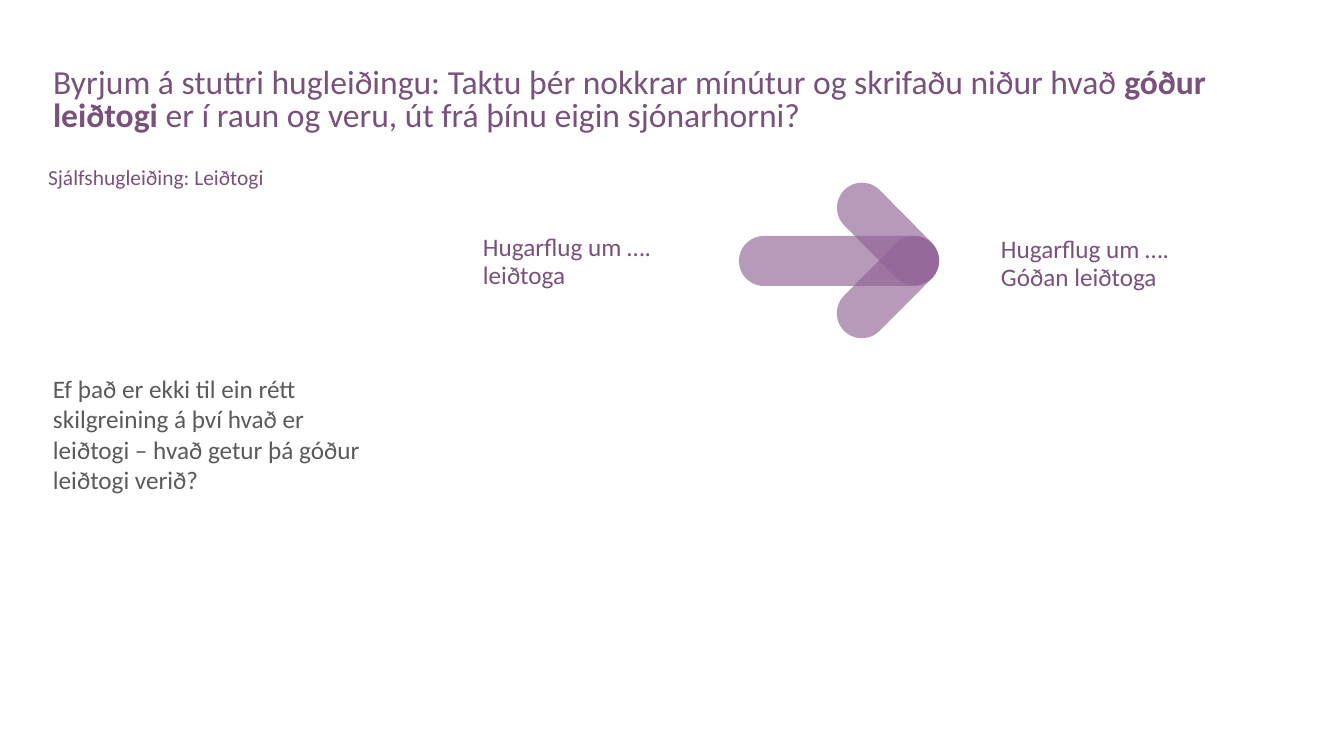
from pptx import Presentation
from pptx.dml.color import RGBColor
from pptx.enum.shapes import MSO_SHAPE as Shape
from pptx.enum.text import MSO_ANCHOR as Anchor
from pptx.oxml.ns import qn
from lxml.etree import SubElement

SCALE = 914400 / 100.8
PLUM, MAUVE, GREY = "79527B", "916395", "595A59"


def px(n):
    return round(n * SCALE)


def color(code):
    return RGBColor.from_string(code)


class Deck:
    font = "Calibri"

    def __init__(self, wide, high):
        self.prs = Presentation()
        self.prs.slide_width, self.prs.slide_height = px(wide), px(high)
        self.slide = self.prs.slides.add_slide(self.prs.slide_layouts[6])

    def text(self, box, lines, size, ink=PLUM, gap=1.0, anchor=Anchor.TOP):
        """Each line is a list of (words, bold) runs."""
        frame = self.slide.shapes.add_textbox(*map(px, box)).text_frame
        form = {"word_wrap": True, "vertical_anchor": anchor,
                "margin_left": px(10), "margin_right": px(10),
                "margin_top": px(5), "margin_bottom": px(5)}
        for key, value in form.items():
            setattr(frame, key, value)
        for i, line in enumerate(lines):
            para = frame.add_paragraph() if i else frame.paragraphs[0]
            para.line_spacing = gap
            for words, bold in line:
                run = para.add_run()
                run.text = words
                style = {"name": self.font, "size": round(size * 12700), "bold": bold}
                for key, value in style.items():
                    setattr(run.font, key, value)
                run.font.color.rgb = color(ink)

    def bar(self, box, turn=0, fill=MAUVE, alpha=65):
        """Round-ended translucent bar, turned by degrees."""
        bar = self.slide.shapes.add_shape(Shape.ROUNDED_RECTANGLE, *map(px, box))
        bar.adjustments[0] = 0.5
        bar.rotation = turn
        bar.shadow.inherit = False
        bar.line.fill.background()
        bar.fill.solid()
        bar.fill.fore_color.rgb = color(fill)
        tint = bar.fill._xPr.find(qn("a:solidFill"))[0]
        SubElement(tint, qn("a:alpha")).set("val", str(alpha * 1000))

    def save(self):
        self.prs.save("out.pptx")


def main():
    deck = Deck(1344, 756)
    deck.text((43, 180, 352, 508),
              [[("Ef það er ekki til ein rétt skilgreining á því hvað er leiðtogi – "
                 "hvað getur þá góður leiðtogi verið?", False)]],
              18, GREY, anchor=Anchor.MIDDLE)
    deck.text((43, 64, 1264, 79),
              [[("Byrjum á stuttri hugleiðingu: Taktu þér nokkrar mínútur og "
                 "skrifaðu niður hvað ", False),
                ("góður leiðtogi ", True),
                ("er í raun og veru, út frá þínu eigin sjónarhorni?", False)]],
              24, gap=0.8)
    deck.text((38, 166, 1266, 28), [[("Sjálfshugleiðing: Leiðtogi", False)]],
              15.3, gap=0.7)

    deck.bar((739, 236, 200, 50))
    for top, turn in ((262, 314.9), (209, 45.3)):
        deck.bar((826, top, 124, 50), turn)

    for box, topic in (((473, 230, 289, 106), "leiðtoga"),
                       ((991, 232, 317, 79), "Góðan leiðtoga")):
        deck.text(box, [[("Hugarflug um ….", False)], [(topic, False)]], 18, gap=0.9)
    deck.save()


if __name__ == "__main__":
    main()
